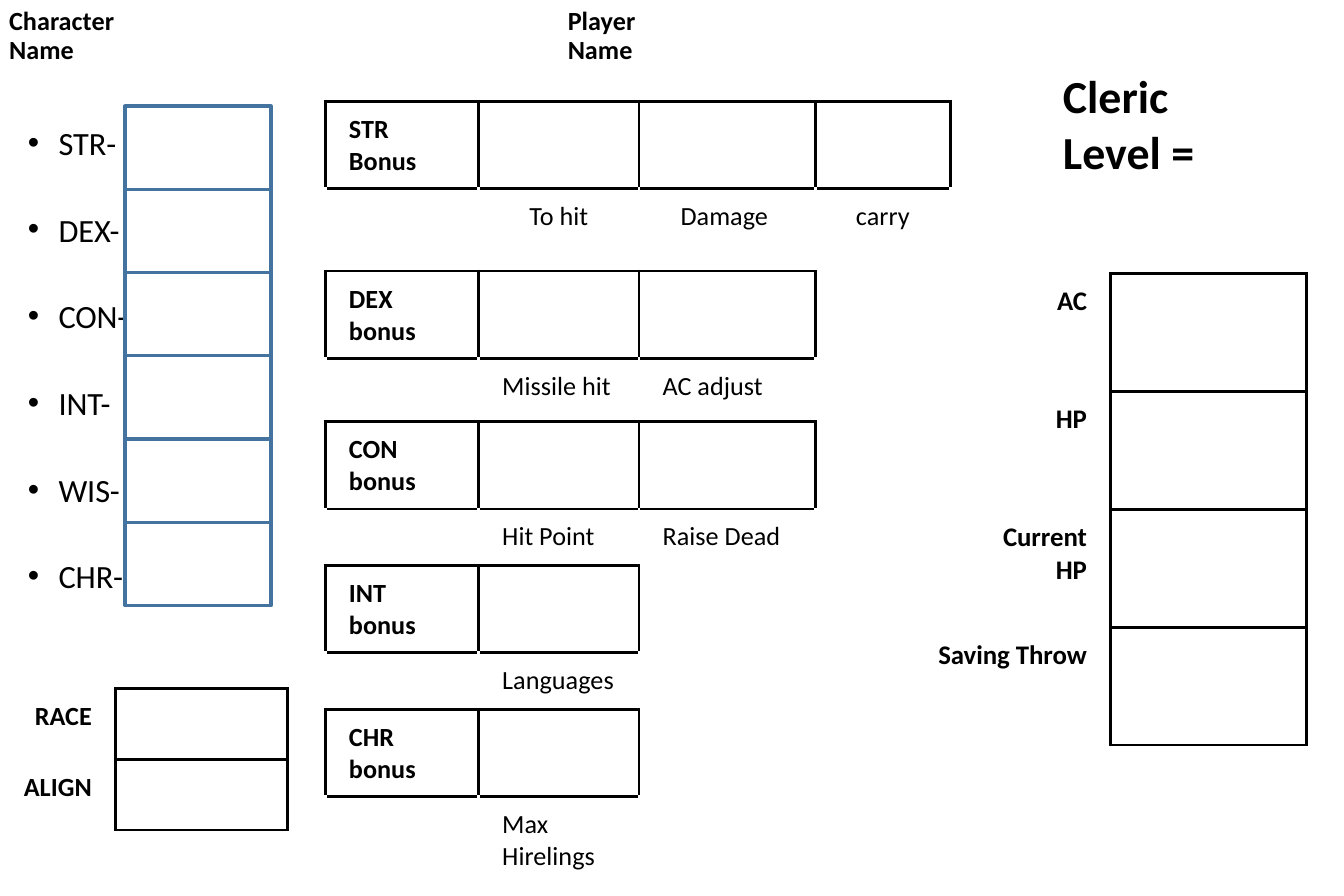
from lxml.etree import SubElement
from pptx import Presentation
from pptx.dml.color import RGBColor
from pptx.enum.shapes import MSO_SHAPE
from pptx.enum.text import MSO_ANCHOR, PP_ALIGN
from pptx.oxml.ns import qn
from pptx.util import Inches, Pt

FONT = "Calibri"
COLORS = {"ink": "000000", "paper": "FFFFFF", "ability": "43739E"}
ABILITIES = ["STR-", "DEX-", "CON-", "INT-", "WIS-", "CHR-"]
BONUSES = [
    ("STR\nBonus", ["To hit", "Damage ", "carry"], PP_ALIGN.CENTER),
    ("DEX bonus", ["Missile hit", "AC adjust"], PP_ALIGN.LEFT),
    ("CON bonus", ["Hit Point", "Raise Dead"], PP_ALIGN.LEFT),
    ("INT bonus", ["Languages"], PP_ALIGN.LEFT),
    ("CHR bonus", ["Max Hirelings"], PP_ALIGN.LEFT),
]


def color(name):
    """Return the named palette colour."""
    return RGBColor.from_string(COLORS[name])


def write(text_frame, text, size, bold=False, align=PP_ALIGN.LEFT):
    """Set text and format every paragraph and run."""
    text_frame.text = text
    for paragraph in text_frame.paragraphs:
        paragraph.alignment = align
        for run in paragraph.runs:
            run.font.name = FONT
            run.font.size = Pt(size)
            run.font.bold = bold
            run.font.color.rgb = color("ink")
        if not paragraph.runs:
            SubElement(paragraph._p, qn("a:endParaRPr"), sz=str(round(size * 100)))


def add_text(slide, box, text, size, bold=False, wrap=True):
    """Add a text box and return its text frame."""
    text_frame = slide.shapes.add_textbox(*map(Inches, box)).text_frame
    text_frame.word_wrap = wrap
    write(text_frame, text, size, bold)
    return text_frame


def add_heading(slide, box, text):
    """Add a small bold heading centred vertically in its box."""
    text_frame = add_text(slide, box, text, 8, bold=True)
    text_frame.vertical_anchor = MSO_ANCHOR.MIDDLE
    text_frame.paragraphs[0].line_spacing = 0.9


def add_class_level(slide, box):
    """Add the class name and level line."""
    text_frame = add_text(slide, box, "Cleric\nLevel =", 14, bold=True, wrap=False)
    text_frame.paragraphs[1].alignment = PP_ALIGN.CENTER


def add_abilities(slide, box):
    """Add the bulleted ability list and its column of score boxes."""
    left, top, width, height = box
    text_frame = add_text(slide, box, "\n".join(ABILITIES), 9.9)
    indent = Inches(0.13)
    for paragraph in text_frame.paragraphs:
        paragraph.line_spacing = 1.8
        paragraph.space_before = Pt(5.1)
        properties = paragraph._p.get_or_add_pPr()
        properties.set("marL", str(indent))
        properties.set("indent", str(-indent))
        SubElement(properties, qn("a:buFont"), typeface="Arial")
        SubElement(properties, qn("a:buChar"), char="•")
    pitch = 0.353
    for index in range(len(ABILITIES)):
        place = (left + 0.51, top + 0.11 + index * pitch, 0.62, pitch)
        score = slide.shapes.add_shape(MSO_SHAPE.RECTANGLE, *map(Inches, place))
        score.shadow.inherit = False
        score.fill.background()
        score.line.color.rgb = color("ability")
        score.line.width = Pt(1)


def set_border(cell, side, name):
    """Draw one cell side in the named colour, or leave it clear."""
    line = SubElement(cell._tc.get_or_add_tcPr(), qn(f"a:ln{side}"), w=str(Pt(1)))
    if name:
        fill = SubElement(line, qn("a:solidFill"))
        SubElement(fill, qn("a:srgbClr"), val=COLORS[name])
    else:
        SubElement(line, qn("a:noFill"))


def add_grid(slide, left, top, widths, heights, boxed, background=None):
    """Add a table with ink borders around the boxed cells only."""
    place = (left, top, sum(widths), sum(heights))
    frame = slide.shapes.add_table(len(heights), len(widths), *map(Inches, place))
    table = frame.table
    table.first_row = table.horz_banding = False
    for column, width in zip(table.columns, widths):
        column.width = Inches(width)
    for row, height in zip(table.rows, heights):
        row.height = Inches(height)
    sides = {"L": (0, -1), "R": (0, 1), "T": (-1, 0), "B": (1, 0)}
    for r in range(len(heights)):
        for c in range(len(widths)):
            cell = table.cell(r, c)
            for side, (down, across) in sides.items():
                inked = {(r, c), (r + down, c + across)} & boxed
                set_border(cell, side, "ink" if inked else background)
            if background:
                cell.fill.solid()
                cell.fill.fore_color.rgb = color(background)
            else:
                cell.fill.background()
            write(cell.text_frame, "", 8)
    return table


def add_bonuses(slide, left, top):
    """Add the ability bonus boxes with captions beneath them."""
    boxed = {(2 * index, c) for index, (_, captions, _) in enumerate(BONUSES)
             for c in range(len(captions) + 1)}
    heights = [0.37, 0.35, 0.37, 0.27, 0.37, 0.24, 0.37, 0.24, 0.37, 0.37]
    table = add_grid(slide, left, top, [0.65, 0.68, 0.75, 0.57], heights,
                     boxed, "paper")
    for index, (name, captions, align) in enumerate(BONUSES):
        write(table.cell(2 * index, 0).text_frame, name, 8, bold=True)
        for c, caption in enumerate(captions, 1):
            write(table.cell(2 * index + 1, c).text_frame, caption, 8, align=align)


def add_labelled_boxes(slide, left, top, widths, height, labels, size):
    """Add a column of boxes with bold labels on their left."""
    boxed = {(r, 1) for r in range(len(labels))}
    table = add_grid(slide, left, top, widths, [height] * len(labels), boxed)
    for r, label in enumerate(labels):
        write(table.cell(r, 0).text_frame, label, size, True, PP_ALIGN.RIGHT)


def build_character_sheet(presentation):
    """Build the cleric character sheet slide."""
    slide = presentation.slides.add_slide(presentation.slide_layouts[6])
    add_class_level(slide, (4.41, 0.24, 0.76, 0.57))
    add_heading(slide, (-0.06, -0.03, 0.72, 0.37), "Character Name")
    add_abilities(slide, (0.02, 0.34, 1.11, 2.41))
    add_heading(slide, (2.31, -0.03, 0.64, 0.37), "Player Name")
    add_bonuses(slide, 1.38, 0.43)
    add_labelled_boxes(slide, -0.06, 2.92, [0.55, 0.73], 0.3, ["RACE", "ALIGN"], 8)
    add_labelled_boxes(slide, 3.75, 1.16, [0.96, 0.83], 0.5,
                       ["AC", "HP", "Current\nHP", "Saving Throw"], 8.2)


def main():
    """Create and save the presentation."""
    presentation = Presentation()
    presentation.slide_width = Inches(5.7)
    presentation.slide_height = Inches(3.8)
    build_character_sheet(presentation)
    presentation.save("out.pptx")


if __name__ == "__main__":
    main()
